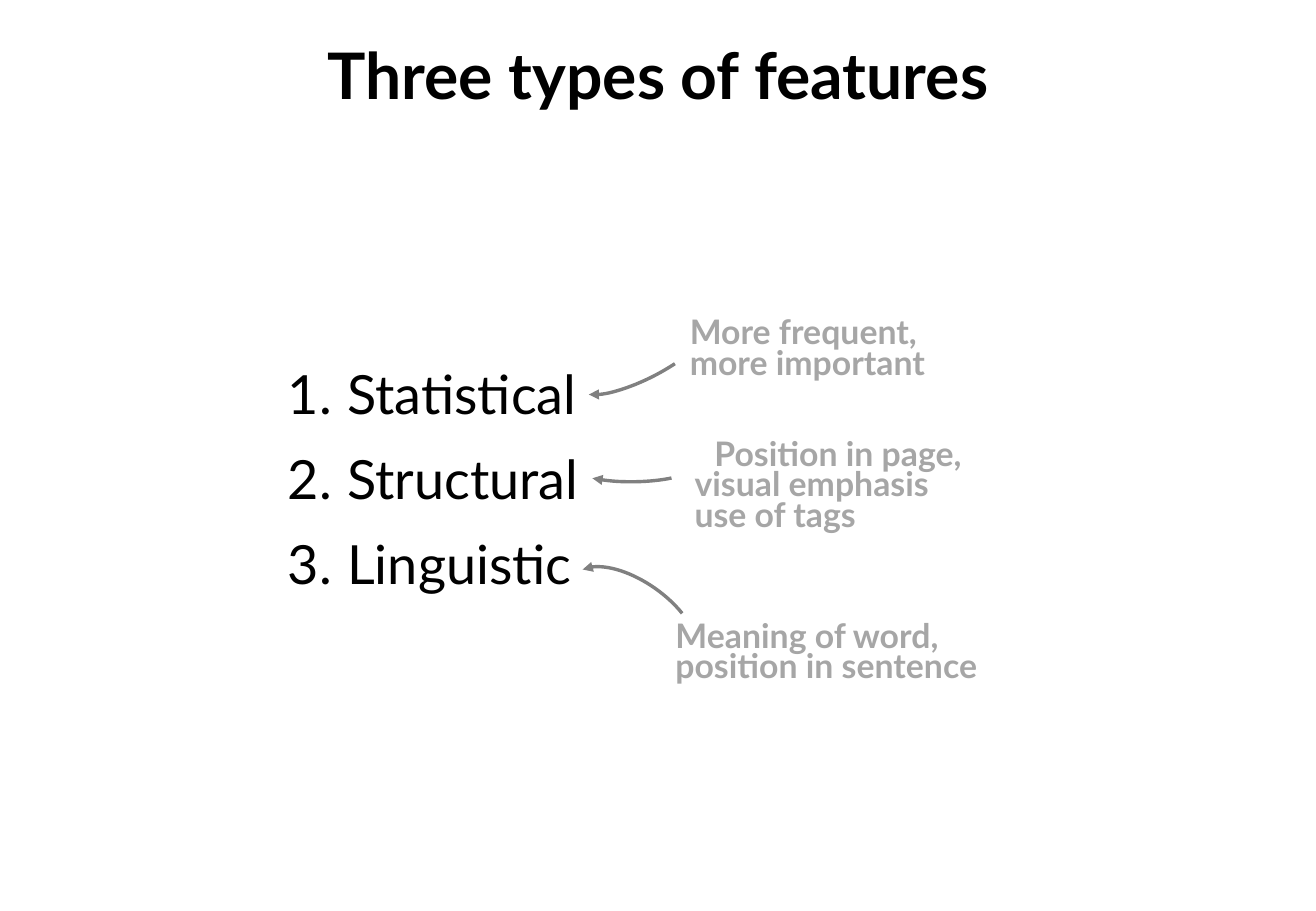
from dataclasses import dataclass

from pptx import Presentation, util as u
from pptx.dml.color import RGBColor
from pptx.enum import shapes, text
from pptx.oxml.ns import qn
from lxml import etree


@dataclass(frozen=True)
class Theme:
    font: str = "Lato"
    ink: str = "000000"
    note: str = "A6A6A6"
    arrow: str = "808080"
    title_size: int = 38
    list_size: int = 32
    note_size: int = 20
    arrow_width: int = 2
    indent: float = 0.95  # hanging indent in cm


THEME = Theme()
LEFT, CENTER = text.PP_ALIGN.LEFT, text.PP_ALIGN.CENTER


def add_text(s, box, lines, size, color, bold=False, aligns=(), anchor=None,
             wrap=True, grow=False, hanging=False, numbered=False,
             line_spacing=None, space_after=None):
    """Add a text box with one paragraph per line; box is in cm."""
    tf = s.shapes.add_textbox(*map(u.Cm, box)).text_frame
    tf.word_wrap = wrap
    tf.vertical_anchor = anchor
    if grow:
        tf.auto_size = text.MSO_AUTO_SIZE.SHAPE_TO_FIT_TEXT
    for i, line in enumerate(lines):
        p = tf.add_paragraph() if i else tf.paragraphs[0]
        p.alignment = aligns[i] if i < len(aligns) else LEFT
        p.line_spacing = line_spacing
        if space_after is not None:
            p.space_after = u.Pt(space_after)
        pPr = p._p.get_or_add_pPr()
        if hanging:
            pPr.set("marL", str(u.Cm(THEME.indent)))
            pPr.set("indent", str(-u.Cm(THEME.indent)))
        if numbered:
            etree.SubElement(pPr, qn("a:buAutoNum"), type="arabicPeriod")
        r = p.add_run()
        r.text = line
        r.font.name = THEME.font
        r.font.size = u.Pt(size)
        r.font.bold = bold
        r.font.color.rgb = RGBColor.from_string(color)


def add_arrow(s, box, rotation, angles, flip):
    """Add a curved arrow: an arc with an arrowhead at its start."""
    sp = s.shapes.add_shape(shapes.MSO_SHAPE.ARC, *map(u.Cm, box))
    sp.shadow.inherit = False
    sp.rotation = rotation
    sp.adjustments[0], sp.adjustments[1] = angles
    sp.fill.background()
    sp.line.color.rgb = RGBColor.from_string(THEME.arrow)
    sp.line.width = u.Pt(THEME.arrow_width)
    etree.SubElement(sp.line._get_or_add_ln(), qn("a:headEnd"), type="triangle")
    if flip:
        sp._element.spPr.find(qn("a:xfrm")).set("flipH", "1")


def add_title(s, box, title):
    add_text(s, box, [title], THEME.title_size, THEME.ink, bold=True,
             aligns=[CENTER], anchor=text.MSO_ANCHOR.MIDDLE)


def add_features(s, box):
    left, top, _, _ = box

    def place(x, y, w, h):
        return left + x, top + y, w, h

    # Numbered list
    add_text(s, place(0, 1.5, 8.26, 5.21),
             [" Statistical", " Structural", " Linguistic"],
             THEME.list_size, THEME.ink, grow=True, hanging=True,
             numbered=True, space_after=12)

    # Grey notes beside the list
    notes = [
        ((8.4, 0.66, 6.15, 1.55), ["More frequent,", "more important"], LEFT),
        ((8.5, 3.2, 6.5, 2.18),
         ["Position in page,", "visual emphasis", "use of tags"], CENTER),
        ((8.1, 7.01, 7.67, 1.55),
         ["Meaning of word,", "position in sentence"], LEFT),
    ]
    for spot, lines, first_align in notes:
        add_text(s, place(*spot), lines, THEME.note_size, THEME.note, bold=True,
                 aligns=[first_align], wrap=False, grow=True, hanging=True,
                 line_spacing=0.75)

    # Curved arrows from each note to its list item
    long_arc, short_arc = (166.86, 29.49), (177.61, 38.96)
    arrows = [
        ((7.21, 0, 0.94, 3.05), 242.9, long_arc, True),
        ((6.96, 2.16, 0.94, 3.05), 270, short_arc, True),
        ((6.73, 5.48, 1.52, 3.05), 305.2, long_arc, False),
    ]
    for spot, rotation, angles, flip in arrows:
        add_arrow(s, place(*spot), rotation, angles, flip)


def main():
    prs = Presentation()
    prs.slide_width, prs.slide_height = u.Cm(27.51), u.Cm(19.05)
    s = prs.slides.add_slide(prs.slide_layouts[6])
    add_title(s, (0.46, 0.53, 26.59, 2.01), "Three types of features")
    add_features(s, (5.77, 5.92, 15.77, 8.56))
    prs.save("out.pptx")


if __name__ == "__main__":
    main()
